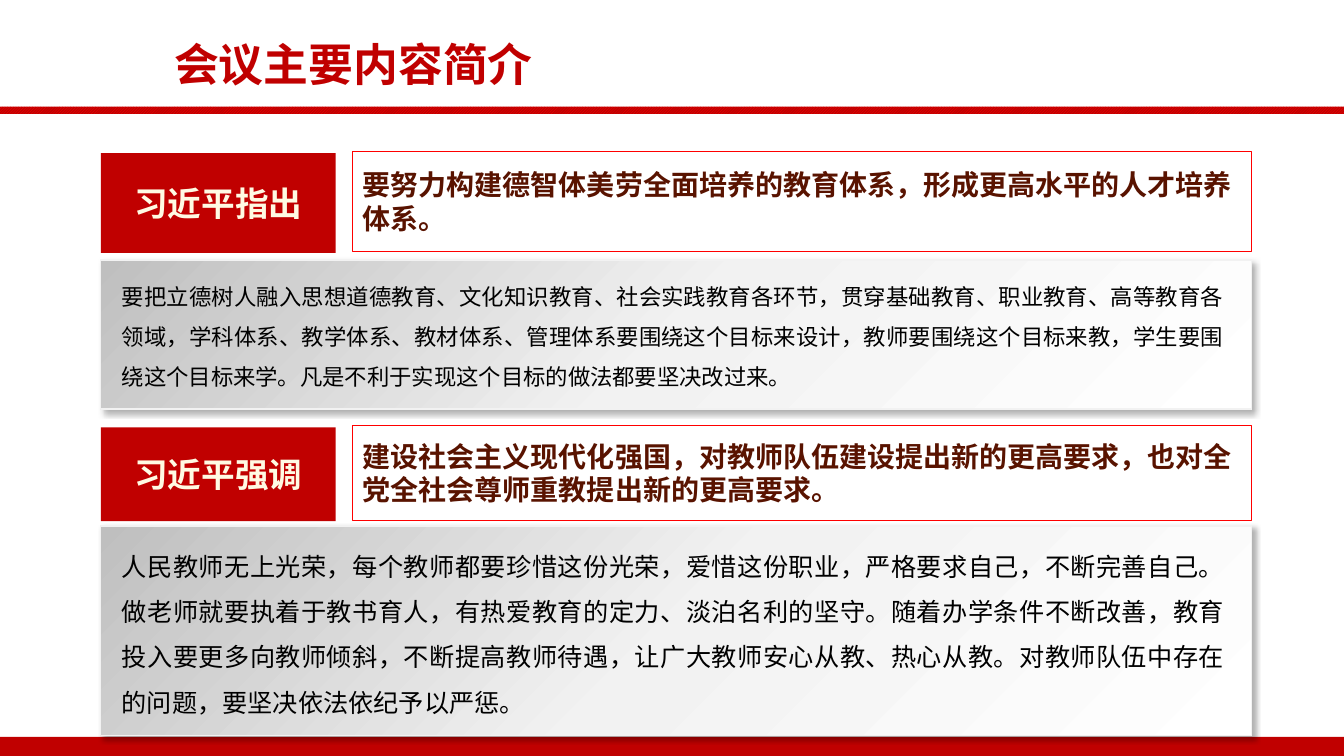
from lxml.etree import SubElement
from pptx import Presentation
from pptx.dml.color import RGBColor
from pptx.enum.dml import MSO_PATTERN
from pptx.enum.shapes import MSO_SHAPE
from pptx.enum.text import MSO_ANCHOR, PP_ALIGN
from pptx.oxml import parse_xml
from pptx.oxml.ns import nsdecls, qn
from pptx.util import Cm, Pt

RED = RGBColor(0xC0, 0x00, 0x00)
BRIGHT_RED = RGBColor(0xFF, 0x00, 0x00)
CREAM = RGBColor(0xFF, 0xFA, 0xE3)
BROWN = RGBColor(0x59, 0x13, 0x00)
BLACK = RGBColor(0x00, 0x00, 0x00)
SILVER = RGBColor(0xBF, 0xBF, 0xBF)
PALE = RGBColor(0xF2, 0xF2, 0xF2)
WHITE = RGBColor(0xFF, 0xFF, 0xFF)

CJK_FONT = "Noto Sans CJK SC"
PAGE_WIDTH, PAGE_HEIGHT = 33.87, 19.05
TAG_WIDTH, TAG_GAP = 5.92, 0.43

SECTIONS = [
    {
        "box": (2.54, 3.81, 29, 6.5),
        "headline_height": 2.54,
        "panel_height": 3.76,
        "size": 16,
        "tag": "习近平指出",
        "headline": "要努力构建德智体美劳全面培养的教育体系，形成更高水平的人才培养体系。",
        "body": "要把立德树人融入思想道德教育、文化知识教育、社会实践教育各环节，"
                "贯穿基础教育、职业教育、高等教育各领域，学科体系、教学体系、教材体系、"
                "管理体系要围绕这个目标来设计，教师要围绕这个目标来教，学生要围绕这个目标来学。"
                "凡是不利于实现这个目标的做法都要坚决改过来。",
    },
    {
        "box": (2.54, 10.72, 29, 7.82),
        "headline_height": 2.39,
        "panel_height": 5.28,
        "size": 18,
        "tag": "习近平强调",
        "headline": "建设社会主义现代化强国，对教师队伍建设提出新的更高要求，"
                    "也对全党全社会尊师重教提出新的更高要求。",
        "body": "人民教师无上光荣，每个教师都要珍惜这份光荣，爱惜这份职业，严格要求自己，"
                "不断完善自己。做老师就要执着于教书育人，有热爱教育的定力、淡泊名利的坚守。"
                "随着办学条件不断改善，教育投入要更多向教师倾斜，不断提高教师待遇，"
                "让广大教师安心从教、热心从教。对教师队伍中存在的问题，要坚决依法依纪予以严惩。",
    },
]


def write(shape, text, size, color, bold=True, font=CJK_FONT, align=PP_ALIGN.LEFT):
    frame = shape.text_frame
    frame.word_wrap = True
    frame.text = text
    para = frame.paragraphs[0]
    para.alignment = align
    span = para.runs[0]
    span.font.size = Pt(size)
    span.font.bold = bold
    span.font.color.rgb = color
    span.font.name = font
    SubElement(span.font._element, qn("a:ea"), typeface=CJK_FONT)
    return para


def add_block(page, box, kind=MSO_SHAPE.RECTANGLE):
    shape = page.shapes.add_shape(kind, *map(Cm, box))
    shape.shadow.inherit = False
    shape.line.fill.background()
    return shape


def add_label(page, box):
    shape = add_block(page, box, MSO_SHAPE.ROUNDED_RECTANGLE)
    shape.adjustments[0] = 0
    shape.text_frame.vertical_anchor = MSO_ANCHOR.MIDDLE
    return shape


def add_panel(page, box):
    panel = add_block(page, box)
    panel.line.color.rgb = PALE
    panel.line.width = Pt(1)
    stops = "".join(
        f'<a:gs pos="{position}"><a:srgbClr val="{color}"/></a:gs>'
        for position, color in ((0, SILVER), (50000, PALE), (100000, WHITE))
    )
    properties = panel._element.spPr
    properties.find(qn("a:prstGeom")).addnext(parse_xml(
        f'<a:gradFill {nsdecls("a")} rotWithShape="1"><a:gsLst>{stops}</a:gsLst>'
        '<a:lin ang="2700000" scaled="0"/></a:gradFill>'
    ))
    properties.find(qn("a:effectLst")).append(parse_xml(
        f'<a:outerShdw {nsdecls("a")} blurRad="{Pt(4)}" dist="{Pt(3)}" dir="2700000" '
        'algn="tl" rotWithShape="0">'
        f'<a:srgbClr val="{BLACK}"><a:alpha val="30000"/></a:srgbClr></a:outerShdw>'
    ))


def add_frame(page, box):
    left, top, width, height = box
    footer = add_block(page, (left, top + height - 0.48, width, 0.48))
    footer.fill.solid()
    footer.fill.fore_color.rgb = RED
    rule = add_block(page, (left, top + 2.69, width, 0.18))
    rule.fill.patterned()
    rule.fill.pattern = MSO_PATTERN.DARK_UPWARD_DIAGONAL
    rule.fill.fore_color.rgb = BRIGHT_RED
    rule.fill.back_color.rgb = RED
    title = page.shapes.add_textbox(Cm(left + 4.14), Cm(top + 0.79), Cm(17.2), Cm(1.63))
    write(title, "会议主要内容简介", 32, RED)


def add_section(page, section):
    left, top, width, height = section["box"]
    headline_height = section["headline_height"]
    panel_height = section["panel_height"]
    tag = add_label(page, (left, top + 0.05, TAG_WIDTH, headline_height - 0.03))
    tag.fill.solid()
    tag.fill.fore_color.rgb = RED
    write(tag, section["tag"], 24, CREAM, align=PP_ALIGN.CENTER)

    indent = TAG_WIDTH + TAG_GAP
    headline = add_label(page, (left + indent, top, width - indent, headline_height))
    headline.fill.background()
    headline.line.color.rgb = BRIGHT_RED
    headline.line.width = Pt(0.75)
    write(headline, section["headline"], 20, BROWN)

    panel_top = top + height - panel_height
    add_panel(page, (left, panel_top, width, panel_height))
    body = page.shapes.add_textbox(
        Cm(left + 0.28), Cm(panel_top + 0.12), Cm(width - 0.7), Cm(panel_height - 0.5)
    )
    para = write(body, section["body"], section["size"], BLACK,
                 bold=False, font="Arial", align=PP_ALIGN.JUSTIFY)
    para.line_spacing = 1.5


def main():
    deck = Presentation()
    deck.slide_width, deck.slide_height = Cm(PAGE_WIDTH), Cm(PAGE_HEIGHT)
    page = deck.slides.add_slide(deck.slide_layouts[6])
    add_frame(page, (0, 0, PAGE_WIDTH, PAGE_HEIGHT))
    for section in SECTIONS:
        add_section(page, section)
    deck.save("out.pptx")


if __name__ == "__main__":
    main()
